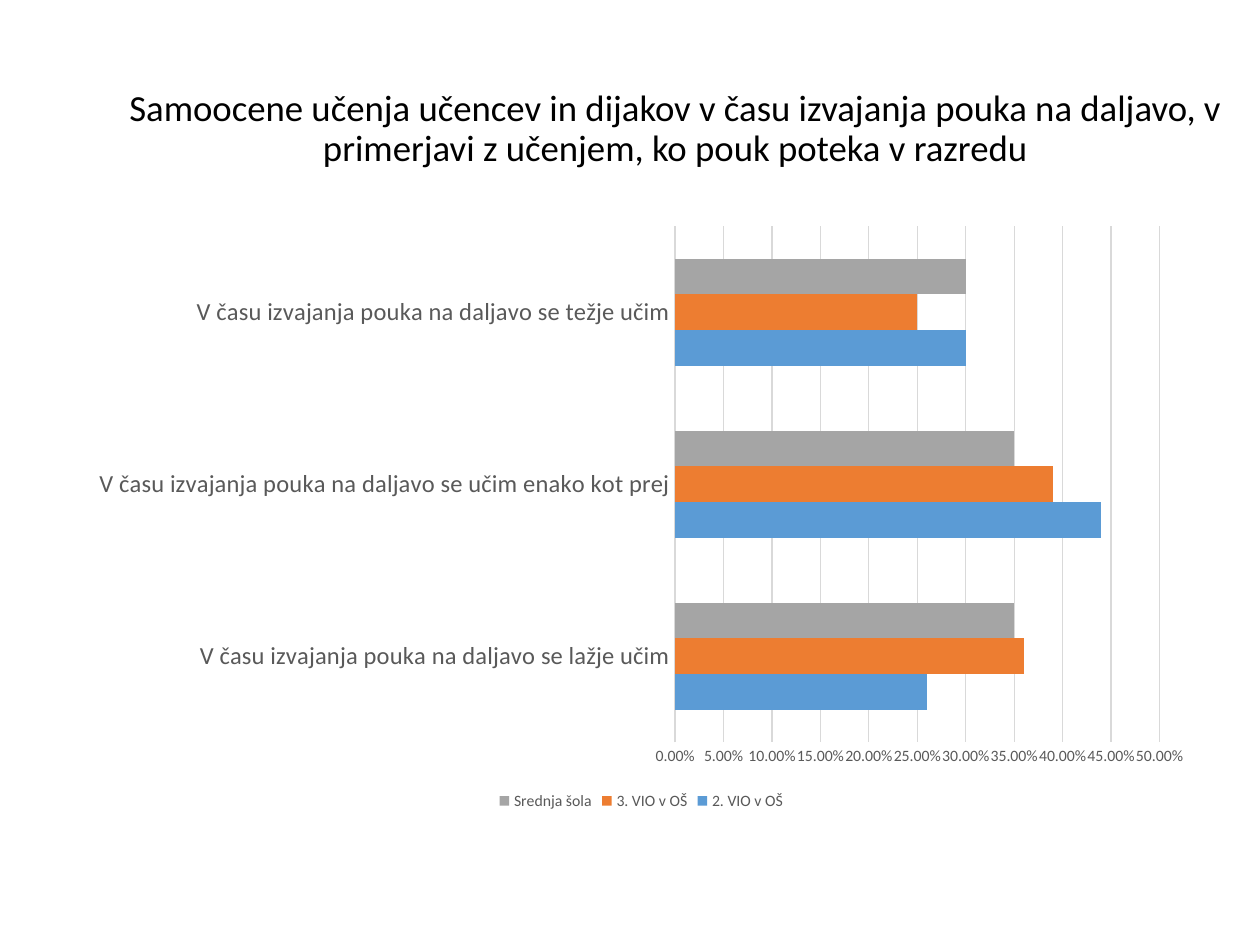
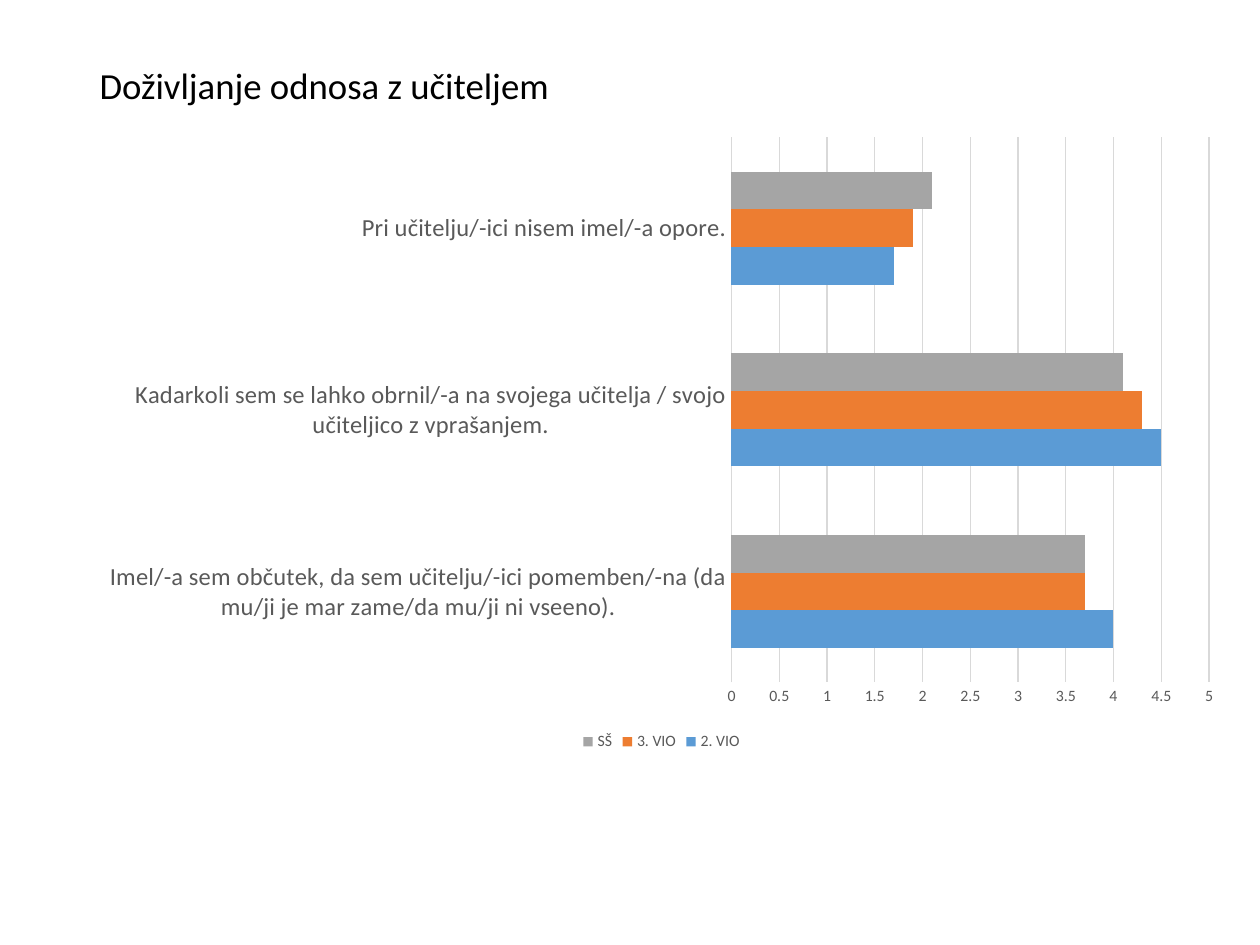
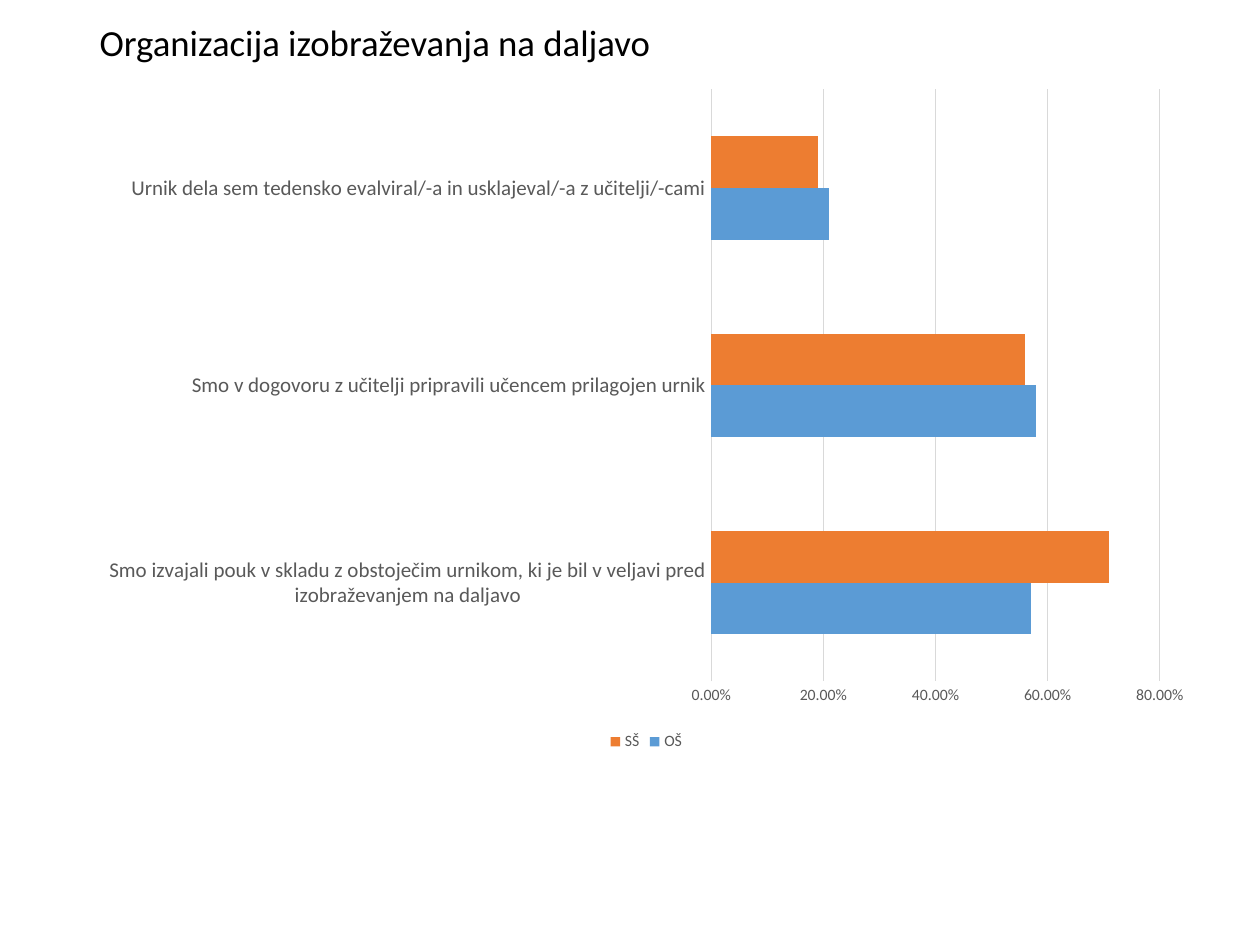
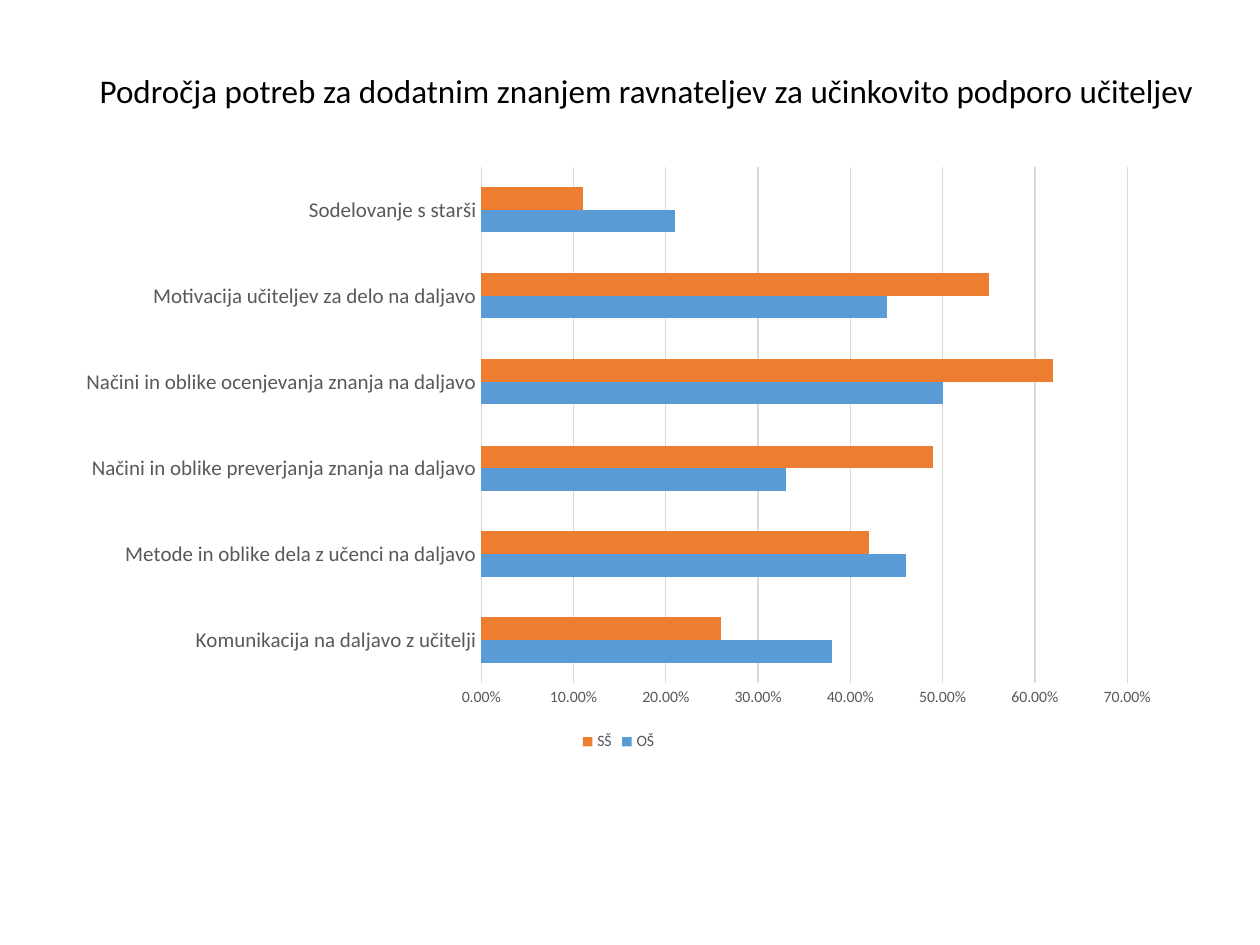
from dataclasses import dataclass

from pptx import Presentation
from pptx.chart.data import CategoryChartData
from pptx.dml.color import RGBColor
from pptx.enum.chart import XL_CHART_TYPE, XL_LEGEND_POSITION, XL_TICK_MARK
from pptx.enum.text import MSO_ANCHOR, MSO_AUTO_SIZE, PP_ALIGN
from pptx.util import Inches, Pt

BAR_CLUSTERED = XL_CHART_TYPE.BAR_CLUSTERED
LEGEND_BOTTOM = XL_LEGEND_POSITION.BOTTOM
NO_TICK = XL_TICK_MARK.NONE
MIDDLE = MSO_ANCHOR.MIDDLE
NO_AUTOFIT = MSO_AUTO_SIZE.NONE
LEFT, CENTER = PP_ALIGN.LEFT, PP_ALIGN.CENTER

FONT = "Calibri"
COLORS = {
    "title": "000000",
    "label": "595959",
    "grid": "D9D9D9",
    "blue": "5B9BD5",
    "orange": "ED7D31",
    "gray": "A5A5A5",
}
SERIES_COLORS = ("blue", "orange", "gray")
SLIDE_WIDTH, SLIDE_HEIGHT = Inches(10), Inches(7.5)
COLUMNS, ROWS = 100, 75
TITLE_ONLY_LAYOUT = 5
PERCENT = "0.00%"
GENERAL = "General"


@dataclass(frozen=True)
class Area:
    """A rectangle in columns and rows of the slide grid."""
    column: float
    row: float
    columns: float
    rows: float

    def place(self) -> tuple[int, int, int, int]:
        cell_width, cell_height = SLIDE_WIDTH / COLUMNS, SLIDE_HEIGHT / ROWS
        return (round(self.column * cell_width), round(self.row * cell_height),
                round(self.columns * cell_width), round(self.rows * cell_height))


@dataclass(frozen=True)
class Title:
    text: str
    area: Area
    size: float = 21
    align: PP_ALIGN = LEFT


@dataclass(frozen=True)
class BarChart:
    area: Area
    categories: tuple[str, ...]
    series: dict[str, tuple[float, ...]]
    maximum: float
    step: float
    label_size: int
    number_format: str = PERCENT


@dataclass(frozen=True)
class ChartPage:
    title: Title
    chart: BarChart


PAGES = (
    ChartPage(
        Title("Samoocene učenja učencev in dijakov v času izvajanja pouka na daljavo, "
              "v primerjavi z učenjem, ko pouk poteka v razredu",
              Area(8.3, 5.2, 90.6, 10.2), align=CENTER),
        BarChart(
            Area(6.1, 17, 89.6, 47.7),
            ("V času izvajanja pouka na daljavo se lažje učim",
             "V času izvajanja pouka na daljavo se učim enako kot prej",
             "V času izvajanja pouka na daljavo se težje učim"),
            {"2. VIO v OŠ": (0.26, 0.44, 0.3),
             "3. VIO v OŠ": (0.36, 0.39, 0.25),
             "Srednja šola": (0.35, 0.35, 0.3)},
            maximum=0.5, step=0.05, label_size=14),
    ),
    ChartPage(
        Title("Doživljanje odnosa z učiteljem", Area(6.9, 4, 86.2, 5.9)),
        BarChart(
            Area(6.9, 9.9, 91.2, 50.1),
            ("Imel/-a sem občutek, da sem učitelju/-ici pomemben/-na "
             "(da mu/ji je mar zame/da mu/ji ni vseeno).",
             "Kadarkoli sem se lahko obrnil/-a na svojega učitelja / svojo učiteljico "
             "z vprašanjem.",
             "Pri učitelju/-ici nisem imel/-a opore."),
            {"2. VIO": (4, 4.5, 1.7),
             "3. VIO": (3.7, 4.3, 1.9),
             "SŠ": (3.7, 4.1, 2.1)},
            maximum=5, step=0.5, label_size=14, number_format=GENERAL),
    ),
    ChartPage(
        Title("Organizacija izobraževanja na daljavo", Area(6.9, 1.3, 91.2, 4.4)),
        BarChart(
            Area(6.9, 6, 88.8, 54),
            ("Smo izvajali pouk v skladu z obstoječim urnikom, ki je bil v veljavi "
             "pred izobraževanjem na daljavo",
             "Smo v dogovoru z učitelji pripravili učencem prilagojen urnik",
             "Urnik dela sem tedensko evalviral/-a in usklajeval/-a z učitelji/-cami"),
            {"OŠ": (0.57, 0.58, 0.21),
             "SŠ": (0.71, 0.56, 0.19)},
            maximum=0.8, step=0.2, label_size=12),
    ),
    ChartPage(
        Title("Področja potreb za dodatnim znanjem ravnateljev za učinkovito podporo učiteljev",
              Area(6.9, 4, 91.2, 6.7), size=18.9),
        BarChart(
            Area(5.1, 12.3, 88, 47.7),
            ("Komunikacija na daljavo z učitelji",
             "Metode in oblike dela z učenci na daljavo",
             "Načini in oblike preverjanja znanja na daljavo",
             "Načini in oblike ocenjevanja znanja na daljavo",
             "Motivacija učiteljev za delo na daljavo",
             "Sodelovanje s starši"),
            {"OŠ": (0.38, 0.46, 0.33, 0.5, 0.44, 0.21),
             "SŠ": (0.26, 0.42, 0.49, 0.62, 0.55, 0.11)},
            maximum=0.7, step=0.1, label_size=12),
    ),
)


def color(name: str) -> RGBColor:
    return RGBColor.from_string(COLORS[name])


def style_font(font, size: float, color_name: str) -> None:
    font.name = FONT
    font.size = Pt(size)
    font.color.rgb = color(color_name)


def style_grid_line(line) -> None:
    line.color.rgb = color("grid")
    line.width = Pt(0.75)


def add_title(page, title: Title) -> None:
    box = page.shapes.title
    box.left, box.top, box.width, box.height = title.area.place()
    frame = box.text_frame
    frame.text = title.text
    frame.word_wrap = True
    frame.auto_size = NO_AUTOFIT
    frame.vertical_anchor = MIDDLE
    para = frame.paragraphs[0]
    para.alignment = title.align
    para.line_spacing = 0.9
    style_font(para.font, title.size, "title")


def style_axes(chart, content: BarChart) -> None:
    category_axis, value_axis = chart.category_axis, chart.value_axis
    for axis, size in ((category_axis, content.label_size), (value_axis, 9)):
        axis.major_tick_mark = axis.minor_tick_mark = NO_TICK
        style_font(axis.tick_labels.font, size, "label")
    category_axis.has_major_gridlines = False
    style_grid_line(category_axis.format.line)

    value_axis.minimum_scale = 0
    value_axis.maximum_scale = content.maximum
    value_axis.major_unit = content.step
    value_axis.has_major_gridlines = True
    style_grid_line(value_axis.major_gridlines.format.line)
    value_axis.format.line.fill.background()
    value_axis.tick_labels.number_format = content.number_format
    value_axis.tick_labels.number_format_is_linked = False


def add_bar_chart(page, content: BarChart) -> None:
    data = CategoryChartData(number_format=content.number_format)
    data.categories = content.categories
    for name, values in content.series.items():
        data.add_series(name, values)
    chart = page.shapes.add_chart(BAR_CLUSTERED, *content.area.place(), data).chart
    chart.has_title = False
    style_font(chart.font, 10, "title")
    style_axes(chart, content)

    plot = chart.plots[0]
    plot.gap_width = 182
    plot.vary_by_categories = False
    for series, color_name in zip(plot.series, SERIES_COLORS):
        series.format.fill.solid()
        series.format.fill.fore_color.rgb = color(color_name)

    chart.has_legend = True
    chart.legend.position = LEGEND_BOTTOM
    chart.legend.include_in_layout = False
    style_font(chart.legend.font, 9, "label")


def main() -> None:
    deck = Presentation()
    deck.slide_width, deck.slide_height = SLIDE_WIDTH, SLIDE_HEIGHT
    for content in PAGES:
        page = deck.slides.add_slide(deck.slide_layouts[TITLE_ONLY_LAYOUT])
        add_title(page, content.title)
        add_bar_chart(page, content.chart)
    deck.save("out.pptx")


if __name__ == "__main__":
    main()
